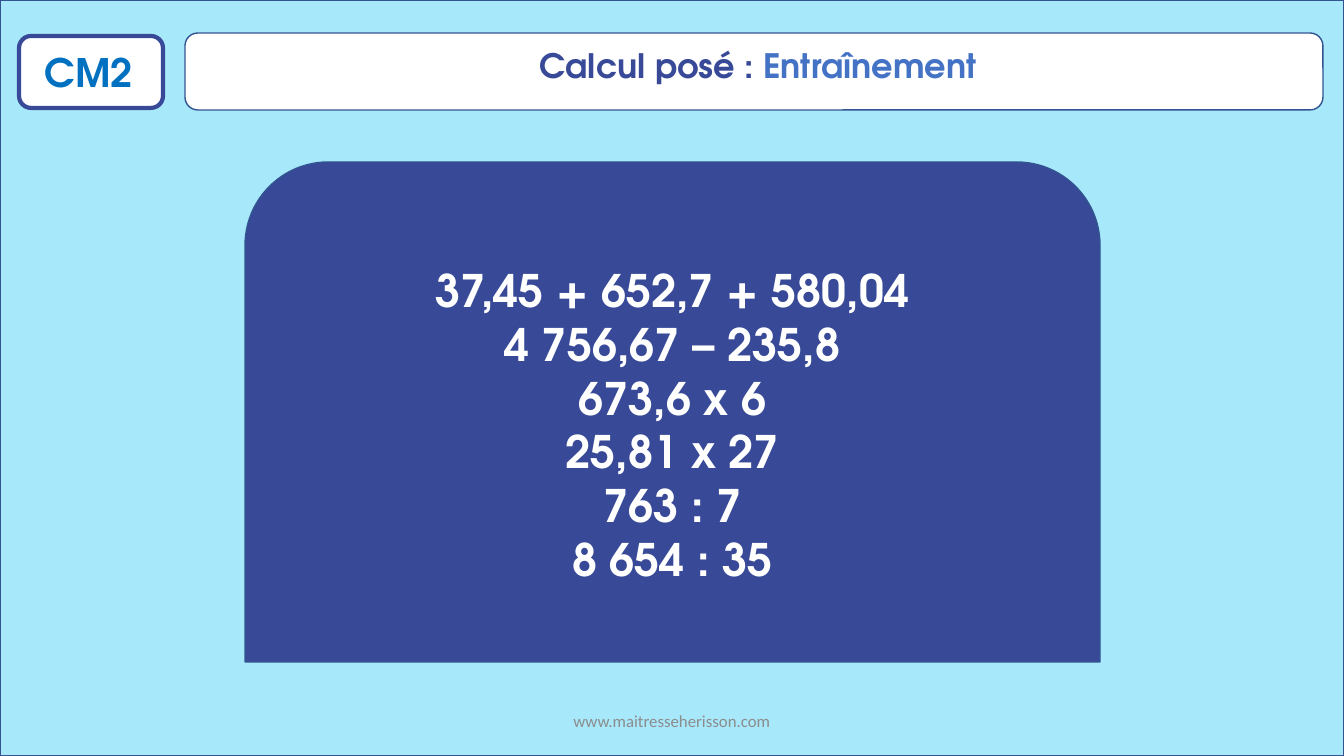
from pptx import Presentation
from pptx.dml.color import RGBColor
from pptx.enum.shapes import MSO_SHAPE
from pptx.enum.text import MSO_ANCHOR, PP_ALIGN
from pptx.util import Emu, Pt

RECT = MSO_SHAPE.RECTANGLE
ROUND = MSO_SHAPE.ROUNDED_RECTANGLE
ROUND_TOP = MSO_SHAPE.ROUND_2_SAME_RECTANGLE
LEFT, CENTER = PP_ALIGN.LEFT, PP_ALIGN.CENTER
TOP, MIDDLE = MSO_ANCHOR.TOP, MSO_ANCHOR.MIDDLE

W, H = 1344, 756
EMU_PER_PX = 12192000 / W

HEADING_FONT, BODY_FONT = "TeX Gyre Adventor", "Calibri"
SKY, WHITE, NAVY, OUTLINE = "A7E8FB", "FFFFFF", "374997", "325491"
LEVEL_BLUE, TITLE_BLUE, GREY = "0070C0", "4472C4", "8C8C8C"

OPERATIONS = [
    "37,45 + 652,7 + 580,04",
    "4 756,67 – 235,8",
    "673,6 x 6",
    "25,81 x 27",
    "763 : 7",
    "8 654 : 35",
]


def px(n):
    return Emu(round(n * EMU_PER_PX))


def rgb(color):
    return RGBColor.from_string(color)


def add_box(s, kind, box, fill, line=OUTLINE, width=1):
    sp = s.shapes.add_shape(kind, *map(px, box))
    sp.shadow.inherit = False
    sp.fill.solid()
    sp.fill.fore_color.rgb = rgb(fill)
    sp.line.color.rgb = rgb(line)
    sp.line.width = Pt(width)
    return sp


def style_run(r, size, color, font=HEADING_FONT, bold=True):
    r.font.name = font
    r.font.size = Pt(size)
    r.font.bold = bold
    r.font.color.rgb = rgb(color)


def add_text(s, box, text, size, color, align=CENTER, anchor=TOP,
             font=HEADING_FONT, bold=True):
    tf = s.shapes.add_textbox(*map(px, box)).text_frame
    tf.word_wrap = True
    tf.vertical_anchor = anchor
    p = tf.paragraphs[0]
    p.text = text
    p.alignment = align
    style_run(p.runs[0], size, color, font, bold)
    return p


def add_level_badge(s, x, y, w, h):
    add_box(s, ROUND, (x, y, w, h), WHITE, NAVY, 3)
    add_text(s, (x + 16, y + 7, w - 33, h - 14), "CM2", 28, LEVEL_BLUE, LEFT)


def add_title_bar(s, x, y, w, h):
    add_box(s, ROUND, (x, y, w, h), WHITE)
    p = add_text(s, (x + 8, y + 7, w - 8, h - 26), "Calcul posé : ", 24, NAVY)
    r = p.add_run()
    r.text = "Entraînement"
    style_run(r, 24, TITLE_BLUE)


def add_operations_panel(s, x, y, w, h):
    tf = add_box(s, ROUND_TOP, (x, y, w, h), NAVY).text_frame
    tf.word_wrap = True
    tf.vertical_anchor = MIDDLE
    tf.text = "\n".join(OPERATIONS)
    for p in tf.paragraphs:
        p.alignment = CENTER
        style_run(p.runs[0], 32, WHITE)


def add_footer(s, x, y, w, h):
    add_text(s, (x, y, w, h), "www.maitresseherisson.com", 12, GREY,
             anchor=MIDDLE, font=BODY_FONT, bold=False)


def main():
    prs = Presentation()
    prs.slide_width, prs.slide_height = px(W), px(H)
    s = prs.slides.add_slide(prs.slide_layouts[6])

    # Background
    add_box(s, RECT, (0, 0, W, H), SKY)
    # Header
    add_level_badge(s, 19, 36, 144, 72)
    add_footer(s, 445, 701, 454, 40)
    add_title_bar(s, 185, 33, 1138, 77)
    # Exercises
    add_operations_panel(s, 245, 162, 855, 500)

    prs.save("out.pptx")


if __name__ == "__main__":
    main()
